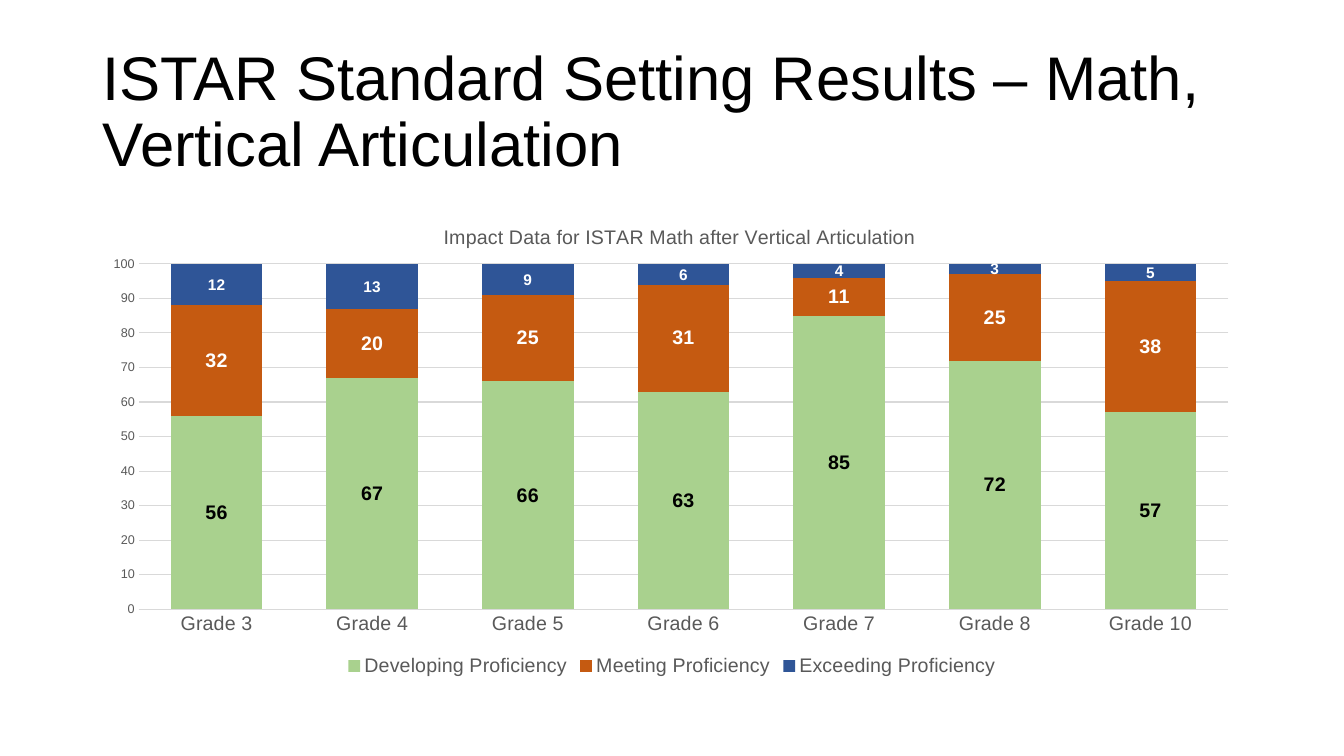
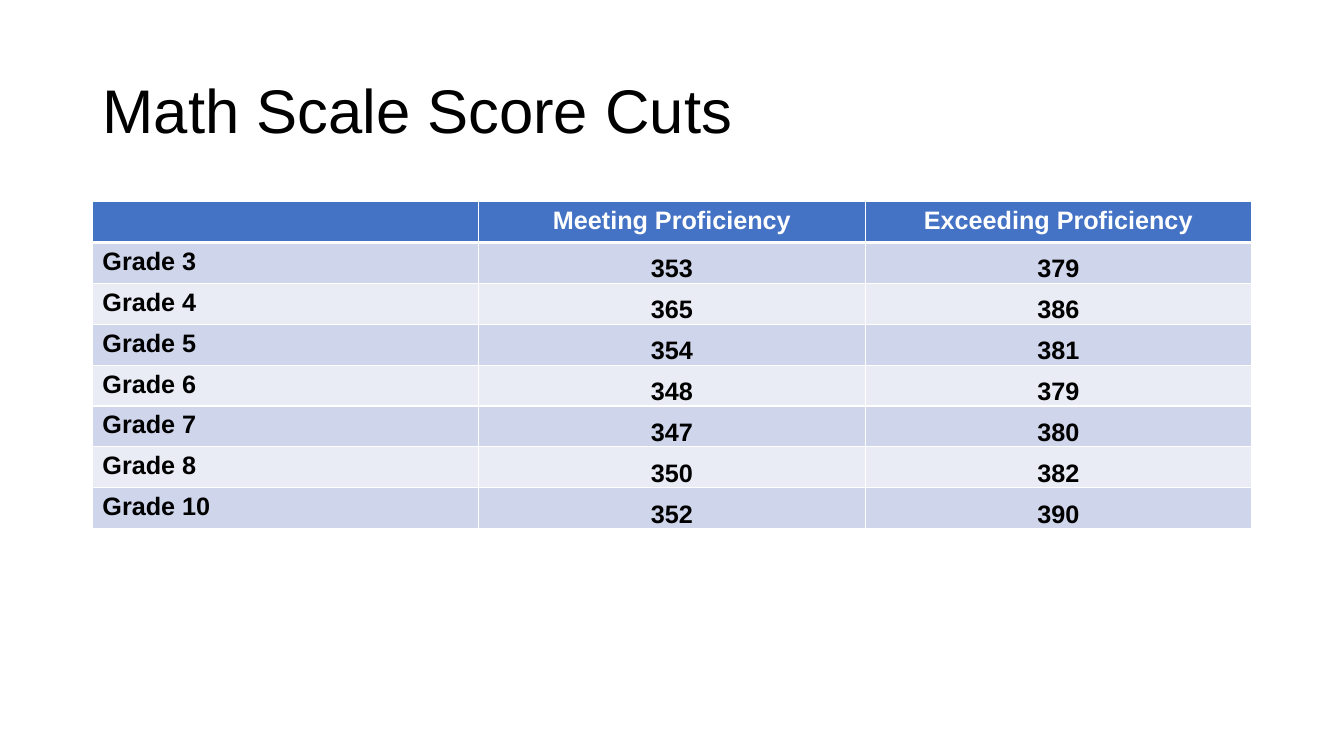
from dataclasses import dataclass

from lxml import etree
from pptx import Presentation
from pptx import util as u
from pptx.chart import data as chart_data
from pptx.dml.color import RGBColor
from pptx.enum import chart as charts
from pptx.enum import text
from pptx.oxml import ns

Pt = u.Pt


@dataclass(frozen=True)
class Theme:
    font: str = "Arial"
    ink: str = "000000"
    paper: str = "FFFFFF"
    muted: str = "595959"
    rule: str = "D9D9D9"
    header: str = "4472C4"
    bands: tuple[str, str] = ("CFD5EA", "E9EBF5")
    title_size: float = 44
    table_size: float = 18
    chart_size: float = 14
    small_label_size: float = 11
    scale_size: float = 9


@dataclass(frozen=True)
class Level:
    name: str
    values: tuple[int, ...]
    fill: str
    label_color: str
    label_size: float


THEME = Theme()
SLIDE_WIDTH, SLIDE_HEIGHT = 960, 540
LEFT, WIDTH = 66, 828
TITLE_TOP, TITLE_HEIGHT = 28.8, 104.4
BODY_TOP, CHART_HEIGHT, ROW_HEIGHT = 144, 342.6, 29.2

GRADES = tuple(f"Grade {number}" for number in (3, 4, 5, 6, 7, 8, 10))
LEVELS = (
    Level("Developing Proficiency", (56, 67, 66, 63, 85, 72, 57),
          "A9D18E", THEME.ink, THEME.chart_size),
    Level("Meeting Proficiency", (32, 20, 25, 31, 11, 25, 38),
          "C55A11", THEME.paper, THEME.chart_size),
    Level("Exceeding Proficiency", (12, 13, 9, 6, 4, 3, 5),
          "2F5597", THEME.paper, THEME.small_label_size),
)
CUT_HEADINGS = ("", "Meeting Proficiency", "Exceeding Proficiency")
CUTS = ((353, 379), (365, 386), (354, 381), (348, 379),
        (347, 380), (350, 382), (352, 390))


def style_font(font, size: float, color: str, bold: bool = False) -> None:
    font.name = THEME.font
    font.size = Pt(size)
    font.bold = bold
    font.color.rgb = RGBColor.from_string(color)


def add_titled_page(deck, title: str):
    page = deck.slides.add_slide(deck.slide_layouts[5])
    box = page.shapes.title
    box.left, box.top = Pt(LEFT), Pt(TITLE_TOP)
    box.width, box.height = Pt(WIDTH), Pt(TITLE_HEIGHT)
    frame = box.text_frame
    frame.text = title
    frame.word_wrap = True
    frame.auto_size = text.MSO_AUTO_SIZE.NONE
    frame.vertical_anchor = text.MSO_ANCHOR.MIDDLE
    para = frame.paragraphs[0]
    para.alignment = text.PP_ALIGN.LEFT
    para.line_spacing = 0.9
    style_font(para.runs[0].font, THEME.title_size, THEME.ink)
    return page


def place_chart_part(part, index: int, **fractions: float) -> None:
    """Give a chart part a manual layout in fractions of the chart area."""
    for old in part.findall(ns.qn("c:layout")):
        part.remove(old)
    layout = etree.Element(ns.qn("c:layout"))
    manual = etree.SubElement(layout, ns.qn("c:manualLayout"))
    settings = {"xMode": "edge", "yMode": "edge", **fractions}
    if "w" in fractions:
        settings = {"layoutTarget": "inner", **settings}
    for name, value in settings.items():
        etree.SubElement(manual, ns.qn(f"c:{name}")).set("val", str(value))
    part.insert(index, layout)


def style_line(line, color: str) -> None:
    line.color.rgb = RGBColor.from_string(color)
    line.width = Pt(0.75)


def style_axes(chart) -> None:
    grades, scale = chart.category_axis, chart.value_axis
    for axis, size in ((grades, THEME.chart_size), (scale, THEME.scale_size)):
        axis.major_tick_mark = axis.minor_tick_mark = charts.XL_TICK_MARK.NONE
        style_font(axis.tick_labels.font, size, THEME.muted)
    style_line(grades.format.line, THEME.rule)
    scale.minimum_scale, scale.maximum_scale, scale.major_unit = 0, 100, 10
    scale.tick_labels.number_format = "0"
    scale.tick_labels.number_format_is_linked = False
    scale.format.line.fill.background()
    style_line(scale.major_gridlines.format.line, THEME.rule)


def style_series(series, level: Level) -> None:
    series.format.fill.solid()
    series.format.fill.fore_color.rgb = RGBColor.from_string(level.fill)
    labels = series.data_labels
    labels.show_value = True
    labels.position = charts.XL_LABEL_POSITION.CENTER
    labels.number_format = "0"
    labels.number_format_is_linked = False
    style_font(labels.font, level.label_size, level.label_color, bold=True)


def add_impact_chart(page) -> None:
    data = chart_data.CategoryChartData(number_format="0")
    data.categories = GRADES
    for level in LEVELS:
        data.add_series(level.name, level.values)
    chart = page.shapes.add_chart(
        charts.XL_CHART_TYPE.COLUMN_STACKED, Pt(LEFT), Pt(BODY_TOP),
        Pt(WIDTH), Pt(CHART_HEIGHT), data).chart
    style_font(chart.font, 10, THEME.ink)

    title = chart.chart_title
    title.text_frame.text = "Impact Data for ISTAR Math after Vertical Articulation"
    style_font(title.text_frame.paragraphs[0].runs[0].font,
               THEME.chart_size, THEME.muted)
    title_part = chart.element.find(".//" + ns.qn("c:title"))
    place_chart_part(title_part, 1, x=0.3, y=0.04)
    plot_part = chart.element.find(".//" + ns.qn("c:plotArea"))
    place_chart_part(plot_part, 0, x=0.04, y=0.13, w=0.94, h=0.72)

    chart.has_legend = True
    chart.legend.position = charts.XL_LEGEND_POSITION.BOTTOM
    chart.legend.include_in_layout = False
    style_font(chart.legend.font, THEME.chart_size, THEME.muted)

    style_axes(chart)
    plot = chart.plots[0]
    plot.gap_width, plot.overlap = 70, 100
    plot.vary_by_categories = False
    for series, level in zip(plot.series, LEVELS):
        style_series(series, level)


def set_borders(cell, top: float, bottom: float) -> None:
    properties = cell._tc.get_or_add_tcPr()
    widths = {"lnL": 1, "lnR": 1, "lnT": top, "lnB": bottom}
    for index, (side, width) in enumerate(widths.items()):
        line = etree.Element(ns.qn(f"a:{side}"), w=str(Pt(width)))
        fill = etree.SubElement(line, ns.qn("a:solidFill"))
        etree.SubElement(fill, ns.qn("a:srgbClr")).set("val", THEME.paper)
        properties.insert(index, line)


def fill_cell(cell, words: str, row: int, column: int) -> None:
    is_header = row == 0
    color = THEME.header if is_header else THEME.bands[(row - 1) % 2]
    cell.fill.solid()
    cell.fill.fore_color.rgb = RGBColor.from_string(color)
    set_borders(cell, top=3 if row == 1 else 1, bottom=3 if is_header else 1)
    if column and not is_header:
        cell.vertical_anchor = text.MSO_ANCHOR.BOTTOM
        cell.margin_left = cell.margin_right = cell.margin_top = Pt(0.75)
        cell.margin_bottom = Pt(0)
    para = cell.text_frame.paragraphs[0]
    para.text = words
    para.alignment = text.PP_ALIGN.CENTER if column else text.PP_ALIGN.LEFT
    style_font(para.font, THEME.table_size,
               THEME.paper if is_header else THEME.ink, bold=True)
    for span in para.runs:
        style_font(span.font, THEME.table_size,
                   THEME.paper if is_header else THEME.ink, bold=True)


def add_cuts_table(page) -> None:
    rows = [CUT_HEADINGS] + [(grade, *map(str, cuts))
                             for grade, cuts in zip(GRADES, CUTS)]
    table = page.shapes.add_table(
        len(rows), len(CUT_HEADINGS), Pt(LEFT), Pt(BODY_TOP),
        Pt(WIDTH), Pt(ROW_HEIGHT * len(rows))).table
    for column in table.columns:
        column.width = Pt(WIDTH / len(CUT_HEADINGS))
    for row, words in enumerate(rows):
        table.rows[row].height = Pt(ROW_HEIGHT)
        for column, word in enumerate(words):
            fill_cell(table.cell(row, column), word, row, column)


def main() -> None:
    deck = Presentation()
    deck.slide_width, deck.slide_height = Pt(SLIDE_WIDTH), Pt(SLIDE_HEIGHT)
    add_impact_chart(add_titled_page(
        deck, "ISTAR Standard Setting Results – Math, Vertical Articulation"))
    add_cuts_table(add_titled_page(deck, "Math Scale Score Cuts"))
    deck.save("out.pptx")


if __name__ == "__main__":
    main()
